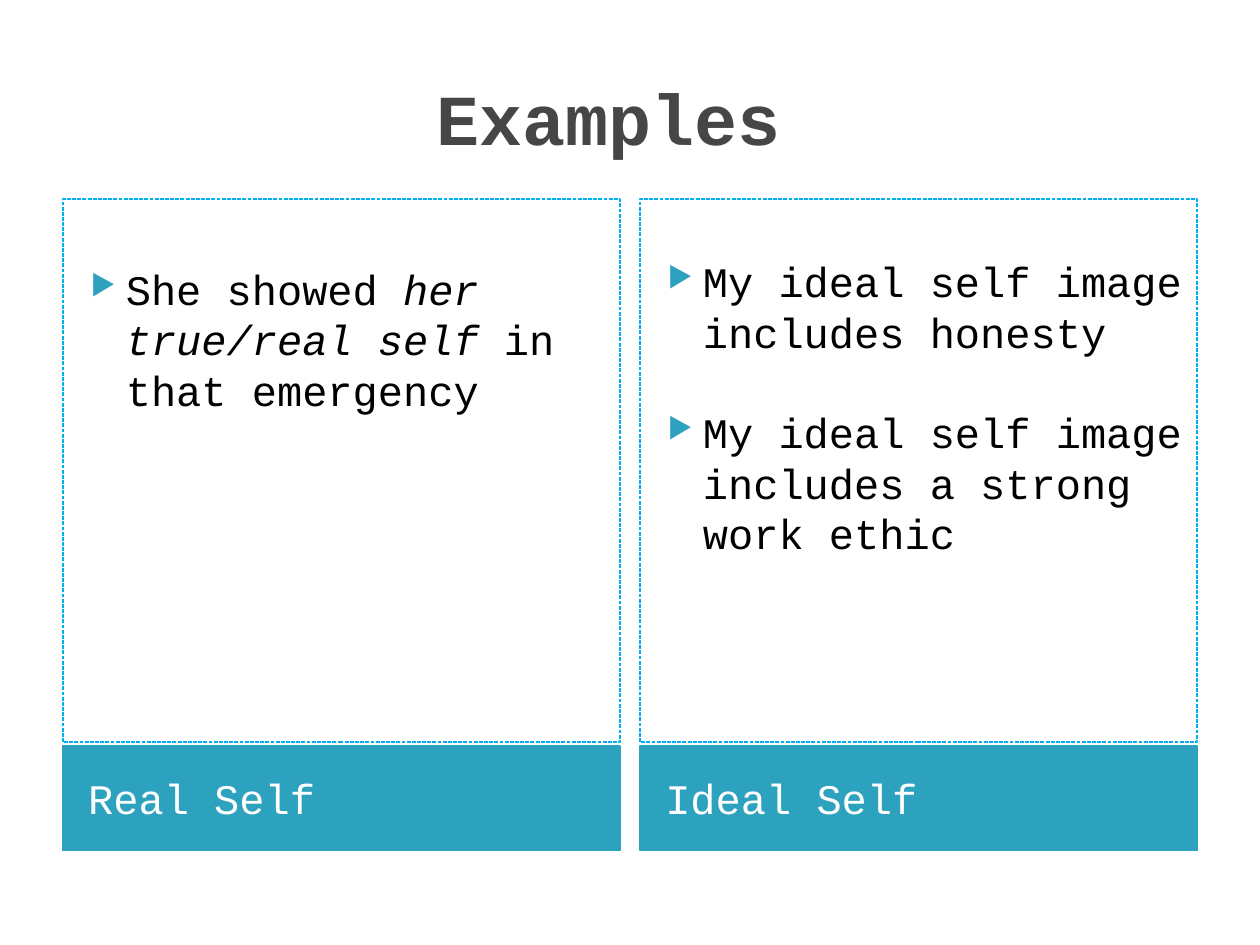
from dataclasses import dataclass

from lxml.etree import SubElement
from pptx import Presentation
from pptx.dml.color import RGBColor
from pptx.enum.dml import MSO_LINE
from pptx.enum.shapes import MSO_SHAPE
from pptx.enum.text import MSO_ANCHOR, PP_ALIGN
from pptx.oxml.ns import qn
from pptx.util import Inches, Pt


@dataclass(frozen=True)
class Theme:
    font: str = "Courier New"
    title_size: int = 41
    body_size: int = 24
    title: RGBColor = RGBColor(0x46, 0x46, 0x46)
    text: RGBColor = RGBColor(0, 0, 0)
    inverse: RGBColor = RGBColor(255, 255, 255)
    accent: RGBColor = RGBColor(0x2D, 0xA2, 0xBF)
    border: RGBColor = RGBColor(0x00, 0xB0, 0xF0)


class ComparisonSlide:
    """Draws the title, panels and labels of a comparison on one page."""

    def __init__(self, page, theme):
        self.page = page
        self.theme = theme

    def add_span(self, para, words, size, color, **formats):
        span = para.add_run()
        span.text = words
        span.font.color.rgb = color
        values = {"name": self.theme.font, "size": Pt(size), **formats}
        for name, value in values.items():
            setattr(span.font, name, value)

    def set_frame(self, box, **formats):
        for name, value in {"word_wrap": True, **formats}.items():
            setattr(box.text_frame, name, value)
        return box.text_frame

    def add_title(self, words, left, top, width, height):
        box = self.page.shapes.add_textbox(*map(Inches, (left, top, width, height)))
        frame = self.set_frame(box, vertical_anchor=MSO_ANCHOR.MIDDLE)
        para = frame.paragraphs[0]
        para.alignment = PP_ALIGN.CENTER
        self.add_span(para, words, self.theme.title_size, self.theme.title, bold=True)

    def add_box(self, left, top, width, height, line_color):
        box = self.page.shapes.add_shape(
            MSO_SHAPE.RECTANGLE, *map(Inches, (left, top, width, height))
        )
        box.shadow.inherit = False
        box.line.color.rgb = line_color
        box.line.width = Pt(0.75)
        return box

    def add_label(self, words, *place):
        box = self.add_box(*place, self.theme.accent)
        box.fill.solid()
        box.fill.fore_color.rgb = self.theme.accent
        frame = self.set_frame(
            box, vertical_anchor=MSO_ANCHOR.MIDDLE, margin_left=Inches(0.2)
        )
        para = frame.paragraphs[0]
        para.alignment = PP_ALIGN.LEFT
        self.add_span(para, words, self.theme.body_size, self.theme.inverse)

    def add_bullet(self, para):
        properties = para._p.get_or_add_pPr()
        properties.set("marL", str(Inches(0.4)))
        properties.set("indent", str(Inches(-0.28)))
        color = SubElement(properties, qn("a:buClr"))
        SubElement(color, qn("a:srgbClr"), val=str(self.theme.accent))
        SubElement(properties, qn("a:buSzPct"), val="68000")
        SubElement(properties, qn("a:buChar"), char="▶")

    def add_panel(self, items, margin_top, *place):
        box = self.add_box(*place, self.theme.border)
        box.fill.background()
        box.line.dash_style = MSO_LINE.SQUARE_DOT
        frame = self.set_frame(
            box, vertical_anchor=MSO_ANCHOR.TOP, margin_top=Inches(margin_top)
        )
        for index, item in enumerate(items):
            para = frame.add_paragraph() if index else frame.paragraphs[0]
            para.alignment = PP_ALIGN.LEFT
            if index:
                para.space_before = Pt(28.8)
            self.add_bullet(para)
            for words, italic in item:
                self.add_span(
                    para, words, self.theme.body_size, self.theme.text, italic=italic
                )


def main():
    deck = Presentation()
    deck.slide_width, deck.slide_height = Inches(10), Inches(7.5)
    slide = ComparisonSlide(deck.slides.add_slide(deck.slide_layouts[6]), Theme())

    margin, width, gap = 0.5, 4.42, 0.16
    columns = [
        (
            "Real Self",
            0.51,
            [
                [
                    ("She showed ", False),
                    ("her true/real self", True),
                    (" in that emergency", False),
                ]
            ],
        ),
        (
            "Ideal Self",
            0.45,
            [
                [("My ideal self image includes honesty", False)],
                [("My ideal self image includes a strong work ethic", False)],
            ],
        ),
    ]

    slide.add_title("Examples ", margin, 0.3, 9, 1.25)
    for index, (label, margin_top, items) in enumerate(columns):
        left = margin + index * (width + gap)
        slide.add_label(label, left, 5.92, width, 0.83)
        slide.add_panel(items, margin_top, left, 1.58, width, 4.31)
    deck.save("out.pptx")


if __name__ == "__main__":
    main()
